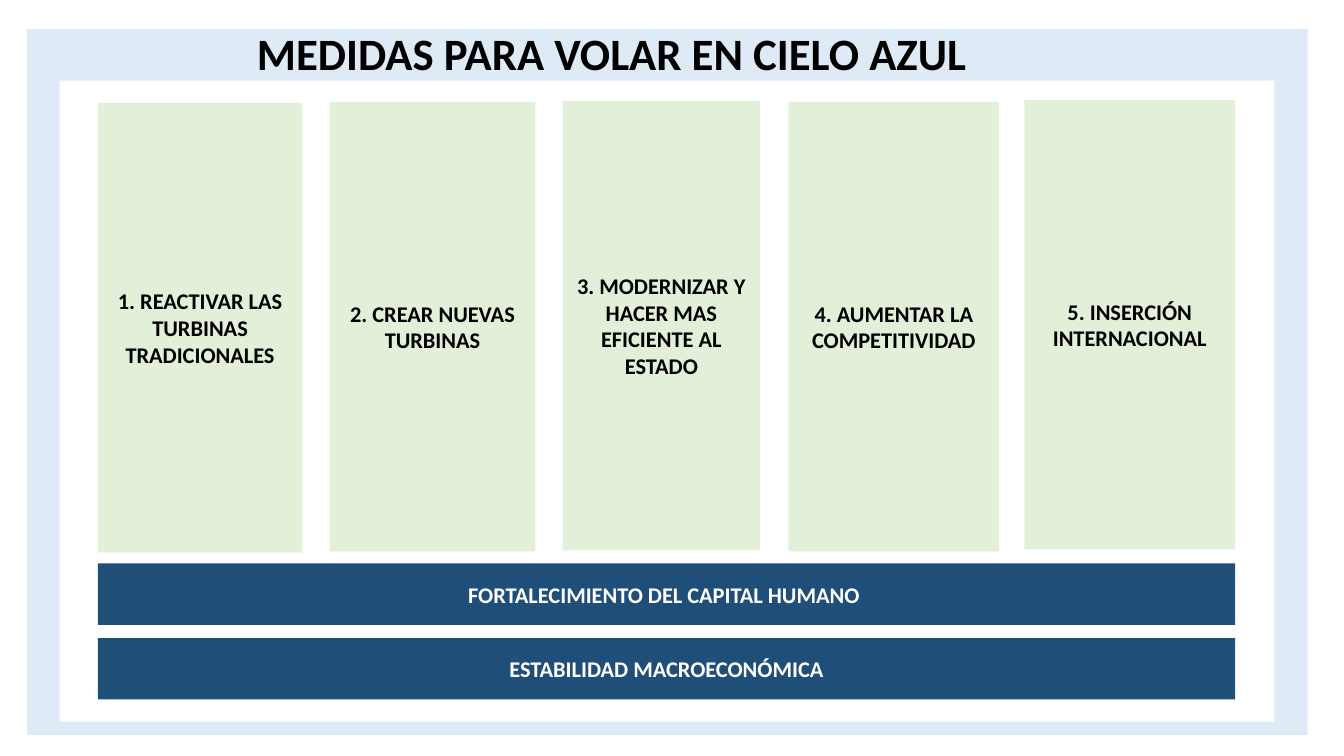
from pptx import Presentation
from pptx import util as u
from pptx.dml.color import RGBColor
from pptx.enum import shapes, text

PX = 9144
THEME = {
    "font": "Calibri",
    "title_size": 32,
    "label_size": 16,
    "black": "000000",
    "white": "FFFFFF",
    "sky": "DEEBF7",
    "green": "E2F0D9",
    "navy": "1F4E79",
}

deck = Presentation()
deck.slide_width = 1333 * PX
deck.slide_height = 750 * PX
slide = deck.slides.add_slide(deck.slide_layouts[6])


def write(frame, words, size, color):
    frame.word_wrap = True
    paragraph = frame.paragraphs[0]
    paragraph.text = words
    paragraph.font.name = THEME["font"]
    paragraph.font.size = u.Pt(THEME[size])
    paragraph.font.bold = True
    paragraph.font.color.rgb = RGBColor.from_string(THEME[color])
    return paragraph


def add_block(left, top, width, height, fill, words="", color="black"):
    block = slide.shapes.add_shape(
        shapes.MSO_SHAPE.RECTANGLE, left * PX, top * PX, width * PX, height * PX)
    block.shadow.inherit = False
    block.fill.solid()
    block.fill.fore_color.rgb = RGBColor.from_string(THEME[fill])
    block.line.fill.background()
    if words:
        block.text_frame.vertical_anchor = text.MSO_ANCHOR.MIDDLE
        label = write(block.text_frame, words, "label_size", color)
        label.alignment = text.PP_ALIGN.CENTER


add_block(27, 29, 1270, 700, "sky")
heading = slide.shapes.add_textbox(245 * PX, 21 * PX, 876 * PX, 64 * PX)
write(heading.text_frame, "MEDIDAS PARA VOLAR EN CIELO AZUL", "title_size", "black")
add_block(59, 80, 1205, 636, "white")

pillars = [
    (97, 102, 203, "1. REACTIVAR LAS TURBINAS TRADICIONALES"),
    (327, 101, 204, "2. CREAR NUEVAS TURBINAS"),
    (558, 100, 196, "3. MODERNIZAR Y HACER MAS EFICIENTE AL ESTADO"),
    (782, 101, 209, "4. AUMENTAR LA COMPETITIVIDAD"),
    (1016, 99, 209, "5. INSERCIÓN INTERNACIONAL"),
]
for left, top, width, measure in pillars:
    add_block(left, top, width, 446, "green", measure)

foundations = ["FORTALECIMIENTO DEL CAPITAL HUMANO ", "ESTABILIDAD MACROECONÓMICA"]
for row, foundation in enumerate(foundations):
    add_block(97, 559 + 74 * row, 1128, 61, "navy", foundation, "white")

deck.save("out.pptx")
